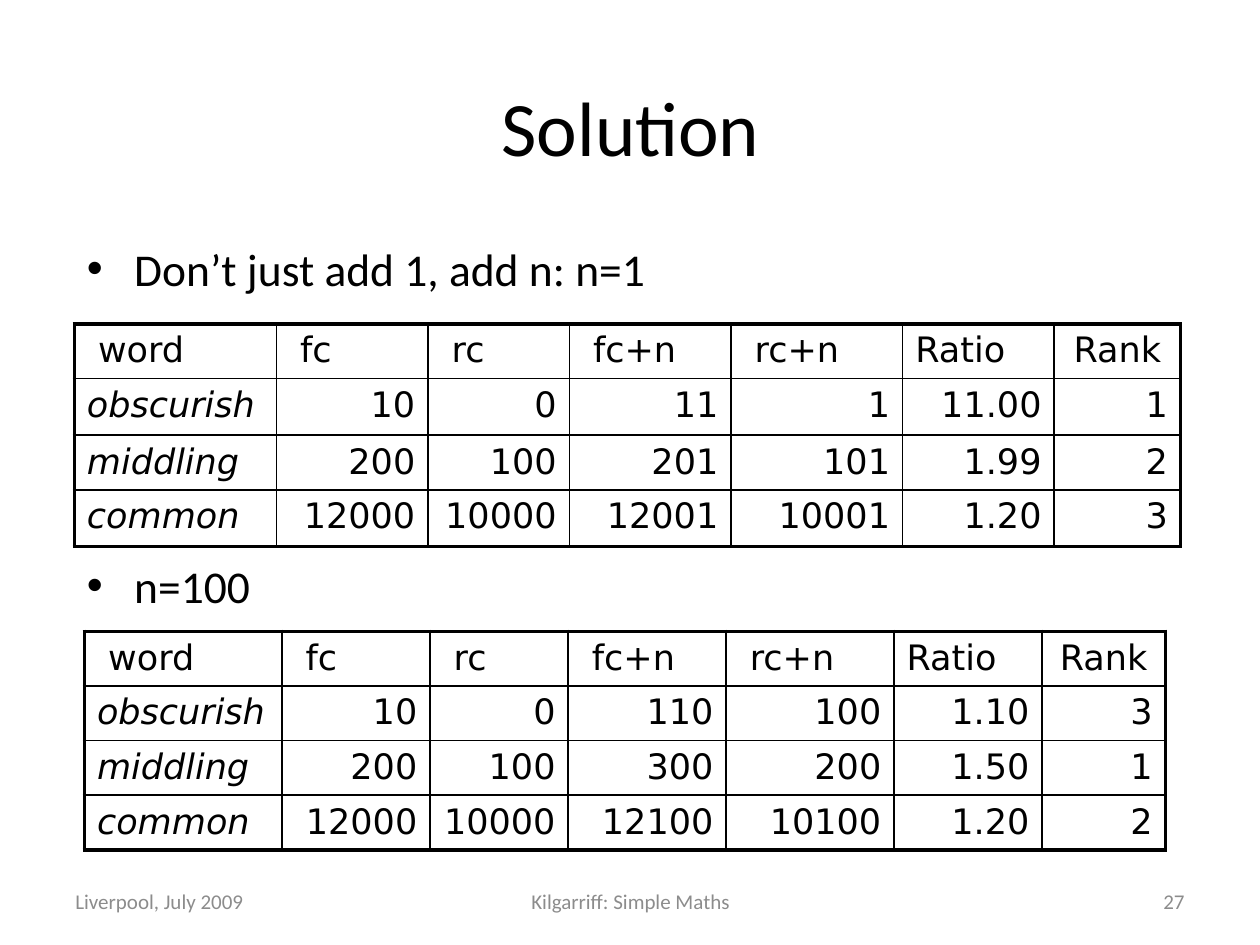
from dataclasses import dataclass

import lxml.etree
import pptx
import pptx.dml.color
import pptx.enum.text
import pptx.oxml.ns
import pptx.slide
import pptx.table
import pptx.text.text
import pptx.util

Inches = pptx.util.Inches
Pt = pptx.util.Pt
Align = pptx.enum.text.PP_ALIGN


@dataclass(frozen=True)
class Theme:
    ink: str = "000000"
    muted: str = "8C8C8C"
    text_font: str = "Calibri"
    table_font: str = "DejaVu Sans"
    title_size: float = 44
    bullet_size: float = 26
    table_size: float = 20
    footer_size: float = 12
    outer_line: float = 2.25
    inner_line: float = 1


@dataclass(frozen=True)
class Box:
    left: float
    top: float
    width: float
    height: float

    def lengths(self) -> tuple:
        return tuple(map(Inches, (self.left, self.top, self.width, self.height)))


@dataclass(frozen=True)
class FooterPart:
    text: str
    box: Box
    align: Align


@dataclass(frozen=True)
class RatioTable:
    box: Box
    row_heights: tuple[float, ...]
    rows: tuple[tuple[str, ...], ...]


THEME = Theme()
HEADER = (" word", " fc", " rc", " fc+n", " rc+n", "Ratio", "Rank")
COLUMN_WEIGHTS = (1.6, 1.2, 1.12, 1.28, 1.36, 1.2, 1)

RATIO_TABLES = (
    RatioTable(
        Box(0.59, 2.57, 8.78, 1.77),
        (0.43, 0.45, 0.43, 0.45),
        (
            ("obscurish", "10", "0", "11", "1", "11.00", "1"),
            ("middling", "200", "100", "201", "101", "1.99", "2"),
            ("common", "12000", "10000", "12001", "10001", "1.20", "3"),
        ),
    ),
    RatioTable(
        Box(0.67, 5.01, 8.58, 1.73),
        (0.43,) * 4,
        (
            ("obscurish", "10", "0", "110", "100", "1.10", "3"),
            ("middling", "200", "100", "300", "200", "1.50", "1"),
            ("common", "12000", "10000", "12100", "10100", "1.20", "2"),
        ),
    ),
)

FOOTER = (
    FooterPart("Liverpool, July 2009", Box(0.5, 6.95, 2.33, 0.4), Align.LEFT),
    FooterPart("Kilgarriff: Simple Maths", Box(3.42, 6.95, 3.17, 0.4), Align.CENTER),
    FooterPart("27", Box(7.17, 6.95, 2.33, 0.4), Align.RIGHT),
)


def style(paragraph: pptx.text.text._Paragraph, size: float,
          font: str = THEME.text_font, color: str = THEME.ink) -> None:
    paragraph.font.size = Pt(size)
    paragraph.font.name = font
    paragraph.font.color.rgb = pptx.dml.color.RGBColor.from_string(color)


def place(shape, box: Box) -> None:
    shape.left, shape.top, shape.width, shape.height = box.lengths()


def fill_title(slide: pptx.slide.Slide) -> None:
    title = slide.shapes.title
    place(title, Box(0.63, 0.33, 8.75, 1.33))
    title.text_frame.text = "Solution"
    style(title.text_frame.paragraphs[0], THEME.title_size)


def fill_bullets(slide: pptx.slide.Slide) -> None:
    body = slide.placeholders[1]
    place(body, Box(0.59, 1.86, 7.8, 4.51))
    frame = body.text_frame
    frame.auto_size = pptx.enum.text.MSO_AUTO_SIZE.NONE
    frame.text = "Don’t just add 1, add n: n=1\nn=100"
    for bullet in frame.paragraphs:
        style(bullet, THEME.bullet_size)
    frame.paragraphs[1].space_before = Pt(150)


def add_footer(slide: pptx.slide.Slide, part: FooterPart) -> None:
    frame = slide.shapes.add_textbox(*part.box.lengths()).text_frame
    frame.word_wrap = True
    frame.vertical_anchor = pptx.enum.text.MSO_ANCHOR.MIDDLE
    frame.text = part.text
    frame.paragraphs[0].alignment = part.align
    style(frame.paragraphs[0], THEME.footer_size, color=THEME.muted)


def set_borders(cell: pptx.table._Cell, outer_sides: dict[str, bool]) -> None:
    qn = pptx.oxml.ns.qn
    properties = cell._tc.get_or_add_tcPr()
    for side, is_outer in outer_sides.items():
        weight = THEME.outer_line if is_outer else THEME.inner_line
        line = lxml.etree.SubElement(properties, qn(f"a:ln{side}"), w=str(Pt(weight)))
        fill = lxml.etree.SubElement(line, qn("a:solidFill"))
        lxml.etree.SubElement(fill, qn("a:srgbClr"), val=THEME.ink)


def cell_alignment(row: int, column: int, last_column: int) -> Align:
    if row == 0:
        return Align.CENTER if column == last_column else Align.LEFT
    return Align.LEFT if column == 0 else Align.RIGHT


def add_ratio_table(slide: pptx.slide.Slide, ratios: RatioTable) -> None:
    rows = (HEADER, *ratios.rows)
    last_row, last_column = len(rows) - 1, len(HEADER) - 1
    table = slide.shapes.add_table(len(rows), len(HEADER), *ratios.box.lengths()).table
    table.first_row = table.horz_banding = False
    for column, weight in zip(table.columns, COLUMN_WEIGHTS):
        column.width = Inches(ratios.box.width * weight / sum(COLUMN_WEIGHTS))
    for row, height in zip(table.rows, ratios.row_heights):
        row.height = Inches(height)
    for r, values in enumerate(rows):
        for c, value in enumerate(values):
            cell = table.cell(r, c)
            set_borders(cell, {"L": c == 0, "R": c == last_column,
                               "T": r == 0, "B": r == last_row})
            cell.fill.background()
            cell.text = value
            paragraph = cell.text_frame.paragraphs[0]
            paragraph.alignment = cell_alignment(r, c, last_column)
            style(paragraph, THEME.table_size, THEME.table_font)
            paragraph.font.italic = r > 0 and c == 0


def main() -> None:
    deck = pptx.Presentation()
    deck.slide_width, deck.slide_height = Inches(10), Inches(7.5)
    slide = deck.slides.add_slide(deck.slide_layouts[1])
    for part in FOOTER:
        add_footer(slide, part)
    fill_title(slide)
    fill_bullets(slide)
    for ratios in RATIO_TABLES:
        add_ratio_table(slide, ratios)
    deck.save("out.pptx")


if __name__ == "__main__":
    main()
